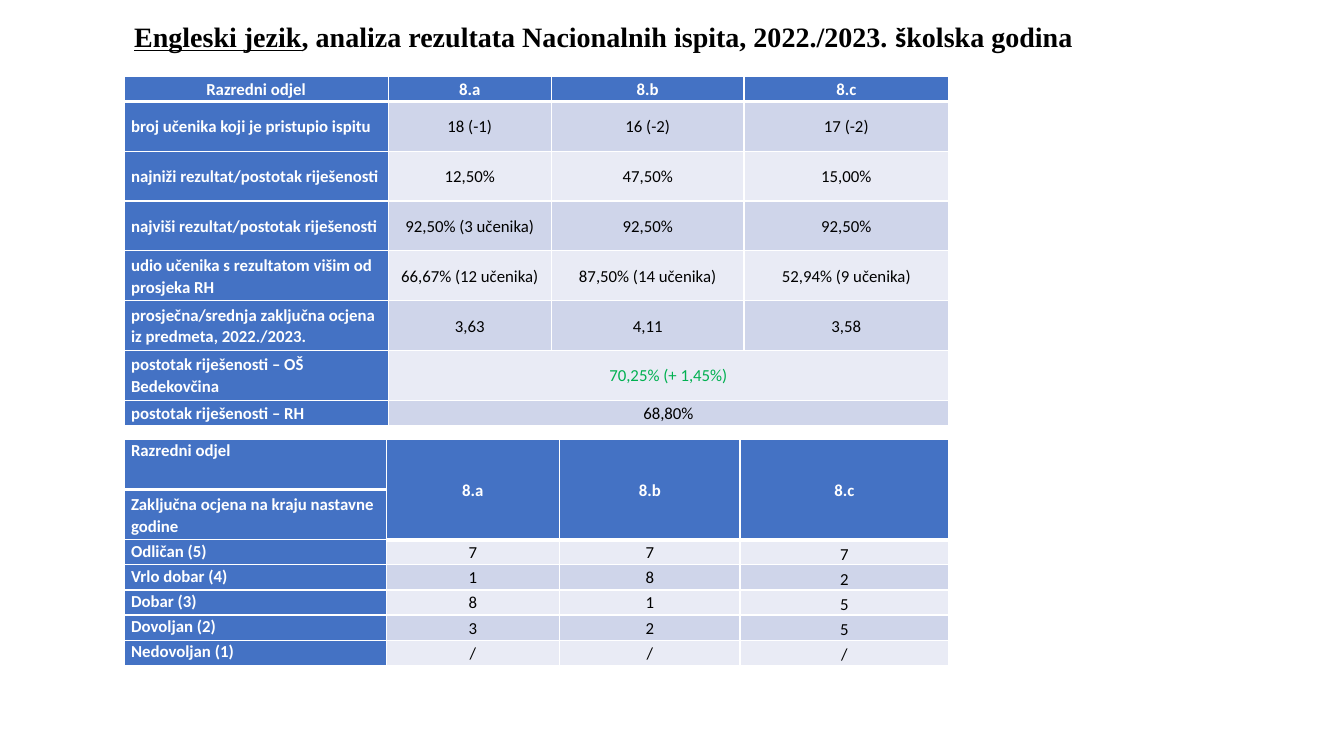
from lxml import etree
from pptx import Presentation
from pptx.dml.color import RGBColor
from pptx.enum.text import MSO_ANCHOR, MSO_AUTO_SIZE, PP_ALIGN
from pptx.oxml.ns import qn
from pptx.util import Inches, Pt

LEFT, CENTER = PP_ALIGN.LEFT, PP_ALIGN.CENTER
TOP, MIDDLE, BOTTOM = MSO_ANCHOR.TOP, MSO_ANCHOR.MIDDLE, MSO_ANCHOR.BOTTOM
NO_FIT = MSO_AUTO_SIZE.NONE
WHITE = RGBColor(0xFF, 0xFF, 0xFF)
BLACK = RGBColor(0, 0, 0)
BLUE = RGBColor(0x44, 0x72, 0xC4)
PALE = RGBColor(0xE9, 0xEB, 0xF5)
MID = RGBColor(0xCF, 0xD5, 0xEA)
GREEN = RGBColor(0x00, 0xB0, 0x50)
SANS, SERIF = "Calibri", "Times New Roman"
EDGE, WIDTH = 1.23, 8.18

TITLE = [
    ("Engleski jezik", SERIF, True),
    (", analiza rezultata Nacionalnih ispita, 2022./2023. ", SERIF, False),
    ("š", SANS, False),
    ("kolska godina", SERIF, False),
]
RESULTS = [
    ["Razredni odjel", "8.a", "8.b", "8.c"],
    ["broj učenika koji je pristupio ispitu", "18 (-1)", "16 (-2)", "17 (-2)"],
    ["najniži rezultat/postotak riješenosti", "12,50%", "47,50%", "15,00%"],
    ["najviši rezultat/postotak riješenosti", "92,50% (3 učenika)", "92,50%", "92,50%"],
    ["udio učenika s rezultatom višim od prosjeka RH",
     "66,67% (12 učenika)", "87,50% (14 učenika)", "52,94% (9 učenika)"],
    ["prosječna/srednja zaključna ocjena iz predmeta, 2022./2023.", "3,63", "4,11", "3,58"],
    ["postotak riješenosti – OŠ Bedekovčina", "70,25% (+ 1,45%)"],
    ["postotak riješenosti – RH", "68,80%"],
]
GRADES = [
    ["Razredni odjel", "8.a", "8.b", "8.c"],
    ["Zaključna ocjena na kraju nastavne godine"],
    ["Odličan (5)", "7", "7", "7"],
    ["Vrlo dobar (4)", "1", "8", "2"],
    ["Dobar (3)", "8", "1", "5"],
    ["Dovoljan (2)", "3", "2", "5"],
    ["Nedovoljan (1)", "/", "/", "/"],
]


def add_title(slide):
    title = slide.shapes.title
    title.left, title.top = Inches(EDGE), Inches(0.14)
    title.width, title.height = Inches(9.57), Inches(0.74)
    frame = title.text_frame
    frame.word_wrap = False
    frame.auto_size = NO_FIT
    frame.vertical_anchor = TOP
    para = frame.paragraphs[0]
    para.alignment = LEFT
    for text, face, line in TITLE:
        run = para.add_run()
        run.text = text
        font = run.font
        font.name, font.size = face, Pt(20)
        font.bold, font.underline = True, line
        font.color.rgb = BLACK


def add_edges(cell, base):
    props = cell._tc.get_or_add_tcPr()
    for side, points in (("L", 1), ("R", 1), ("T", 1), ("B", base)):
        line = etree.SubElement(props, qn(f"a:ln{side}"), w=str(Pt(points)))
        fill = etree.SubElement(line, qn("a:solidFill"))
        etree.SubElement(fill, qn("a:srgbClr"), val=str(WHITE))


def paint(cell, back, base):
    add_edges(cell, base)
    cell.fill.solid()
    cell.fill.fore_color.rgb = back
    cell.margin_left = cell.margin_right = Inches(0.07)
    cell.margin_top = cell.margin_bottom = 0
    cell.vertical_anchor = MIDDLE


def write(cell, text, align, color, bold):
    cell.text_frame.text = text
    para = cell.text_frame.paragraphs[0]
    para.alignment = align
    para.line_spacing = 1.07
    font = para.runs[0].font
    font.name, font.size, font.bold = SANS, Pt(12), bold
    font.color.rgb = color


def add_grid(slide, data, top, height, cols, units, heads):
    frame = slide.shapes.add_table(len(data), len(cols), Inches(EDGE), Inches(top),
                                   Inches(WIDTH), Inches(height))
    grid = frame.table
    for col, width in zip(grid.columns, cols):
        col.width = Inches(width)
    for row, unit in zip(grid.rows, units):
        row.height = Inches(height * unit / sum(units))
    for r, row in enumerate(data):
        for c in range(len(cols)):
            cell = grid.cell(r, c)
            strong = c == 0 or r < heads
            back = BLUE if strong else (MID if r % 2 else PALE)
            thick = r == 0 or (r < heads and c > 0)
            paint(cell, back, 3 if thick else 1)
            if c < len(row):
                write(cell, row[c], CENTER if c else LEFT,
                      WHITE if strong else BLACK, strong)
    return grid


def add_results(slide):
    grid = add_grid(slide, RESULTS, 0.76, 3.46, [2.62, 1.62, 1.91, 2.03],
                    [1] + [2] * 6 + [1], 1)
    grid.cell(0, 0).text_frame.paragraphs[0].alignment = CENTER
    for r in (6, 7):
        grid.cell(r, 1).merge(grid.cell(r, 3))
    share = grid.cell(6, 1).text_frame.paragraphs[0].runs[0]
    share.font.color.rgb = GREEN


def add_grades(slide):
    grid = add_grid(slide, GRADES, 4.36, 2.24, [2.6, 1.72, 1.79, 2.07],
                    [2, 2] + [1] * 5, 2)
    for c in (1, 2, 3):
        grid.cell(0, c).merge(grid.cell(1, c))
    grid.cell(0, 0).vertical_anchor = TOP
    for r in range(2, len(GRADES)):
        grid.cell(r, 0).vertical_anchor = TOP
        grid.cell(r, 3).vertical_anchor = BOTTOM


def main():
    deck = Presentation()
    deck.slide_width, deck.slide_height = Inches(13.33), Inches(7.5)
    slide = deck.slides.add_slide(deck.slide_layouts[5])
    add_title(slide)
    add_results(slide)
    add_grades(slide)
    deck.save("out.pptx")


if __name__ == "__main__":
    main()
